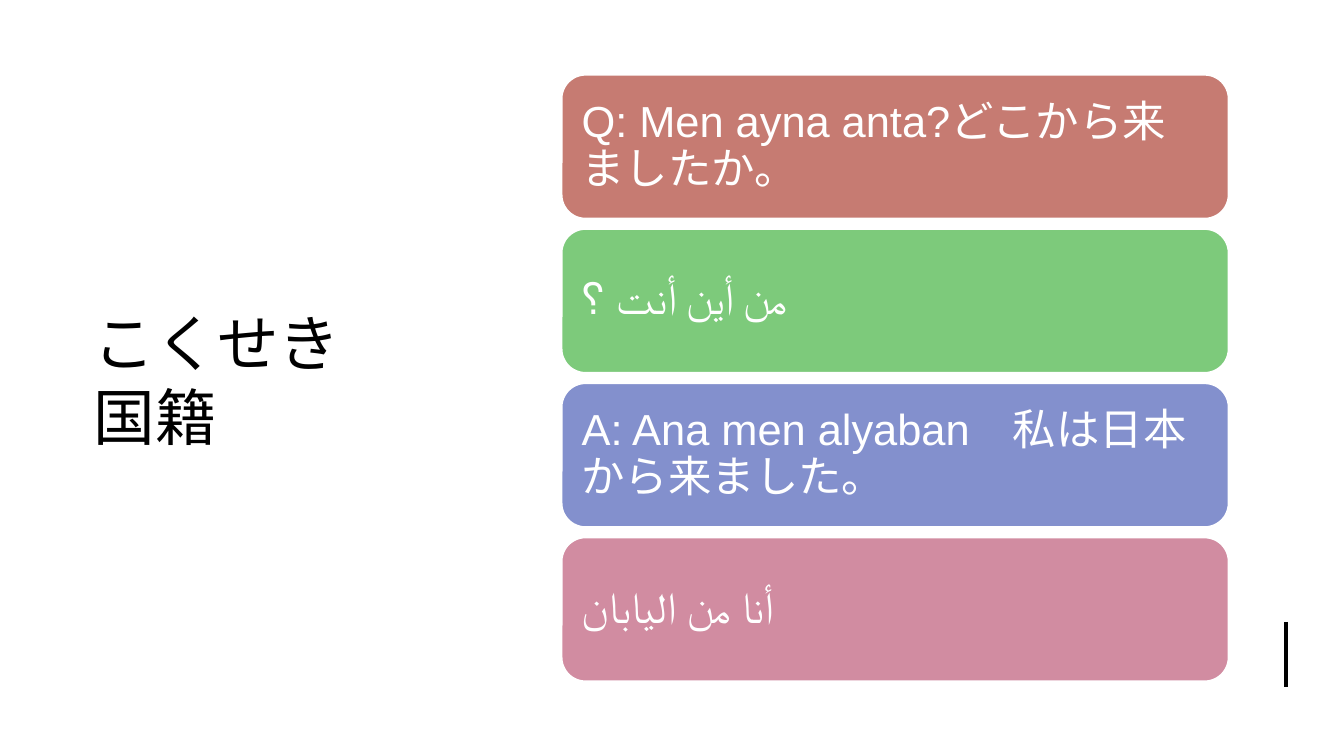
from dataclasses import dataclass
from typing import Any

import pptx
import pptx.dml.color
import pptx.enum.shapes
import pptx.enum.text
import pptx.oxml
import pptx.oxml.ns
import pptx.util

RGBColor = pptx.dml.color.RGBColor
BLACK = RGBColor(0x00, 0x00, 0x00)
WHITE = RGBColor(0xFF, 0xFF, 0xFF)
RED = RGBColor(0xC6, 0x7B, 0x72)
GREEN = RGBColor(0x7D, 0xCA, 0x7B)
BLUE = RGBColor(0x83, 0x90, 0xCD)
PINK = RGBColor(0xD1, 0x8C, 0xA1)

SLIDE_WIDTH = pptx.util.Inches(13.333)
SLIDE_HEIGHT = pptx.util.Inches(7.5)
TITLE_ONLY_LAYOUT = 5

CARD_LEFT, CARD_TOP = 41.78, 9.87
CARD_WIDTH, CARD_HEIGHT = 49.65, 19.07
CARD_PITCH = 20.4
CARD_MARGIN = pptx.util.Inches(0.13)


@dataclass(frozen=True)
class Card:
    text: str
    color: RGBColor


CARDS = (
    Card("Q: Men ayna anta?どこから来ましたか。", RED),
    Card("من أين أنت ؟", GREEN),
    Card("A: Ana men alyaban　私は日本から来ました。", BLUE),
    Card("أنا من اليابان", PINK),
)


def across(percent: float) -> int:
    return round(SLIDE_WIDTH * percent / 100)


def down(percent: float) -> int:
    return round(SLIDE_HEIGHT * percent / 100)


def apply_format(target: Any, values: dict[str, Any]) -> None:
    for name, value in values.items():
        setattr(target, name, value)


def write_text(shape: Any, text: str, size: float, color: RGBColor, line_spacing: float) -> None:
    apply_format(shape.text_frame, {
        "word_wrap": True,
        "auto_size": pptx.enum.text.MSO_AUTO_SIZE.NONE,
        "vertical_anchor": pptx.enum.text.MSO_ANCHOR.MIDDLE,
    })
    paragraph = shape.text_frame.paragraphs[0]
    paragraph.text = text
    apply_format(paragraph, {
        "alignment": pptx.enum.text.PP_ALIGN.LEFT,
        "line_spacing": line_spacing,
    })
    for run in paragraph.runs:
        apply_format(run.font, {"name": "Arial", "size": pptx.util.Pt(size)})
        run.font.color.rgb = color


def add_title(slide: Any) -> None:
    title = slide.shapes.title
    apply_format(title, {
        "left": across(6.23),
        "top": down(12.53),
        "width": across(28.28),
        "height": down(75.2),
    })
    write_text(title, "こくせき\n国籍", 44, BLACK, 1.0)


def add_card(slide: Any, card: Card, row: int) -> None:
    shape = slide.shapes.add_shape(
        pptx.enum.shapes.MSO_SHAPE.ROUNDED_RECTANGLE,
        across(CARD_LEFT), down(CARD_TOP + row * CARD_PITCH),
        across(CARD_WIDTH), down(CARD_HEIGHT),
    )
    shape.shadow.inherit = False
    shape.fill.solid()
    shape.fill.fore_color.rgb = card.color
    shape.line.color.rgb = WHITE
    shape.line.width = pptx.util.Pt(1.5)
    sides = ("left", "top", "right", "bottom")
    apply_format(shape.text_frame, {f"margin_{side}": CARD_MARGIN for side in sides})
    write_text(shape, card.text, 31, WHITE, 0.9)


def add_accent_line(slide: Any) -> None:
    line = slide.shapes.add_connector(
        pptx.enum.shapes.MSO_CONNECTOR.STRAIGHT,
        across(95.7), down(82.27), across(95.7), down(90.93),
    )
    line.line.color.rgb = BLACK
    line.line.width = pptx.util.Pt(3)
    properties = line._element.spPr
    properties.append(pptx.oxml.parse_xml(
        f"<a:effectLst {pptx.oxml.ns.nsdecls('a')}/>"
    ))


def main() -> None:
    presentation = pptx.Presentation()
    apply_format(presentation, {"slide_width": SLIDE_WIDTH, "slide_height": SLIDE_HEIGHT})
    slide = presentation.slides.add_slide(presentation.slide_layouts[TITLE_ONLY_LAYOUT])
    add_title(slide)
    add_accent_line(slide)
    for row, card in enumerate(CARDS):
        add_card(slide, card, row)
    presentation.save("out.pptx")


if __name__ == "__main__":
    main()
